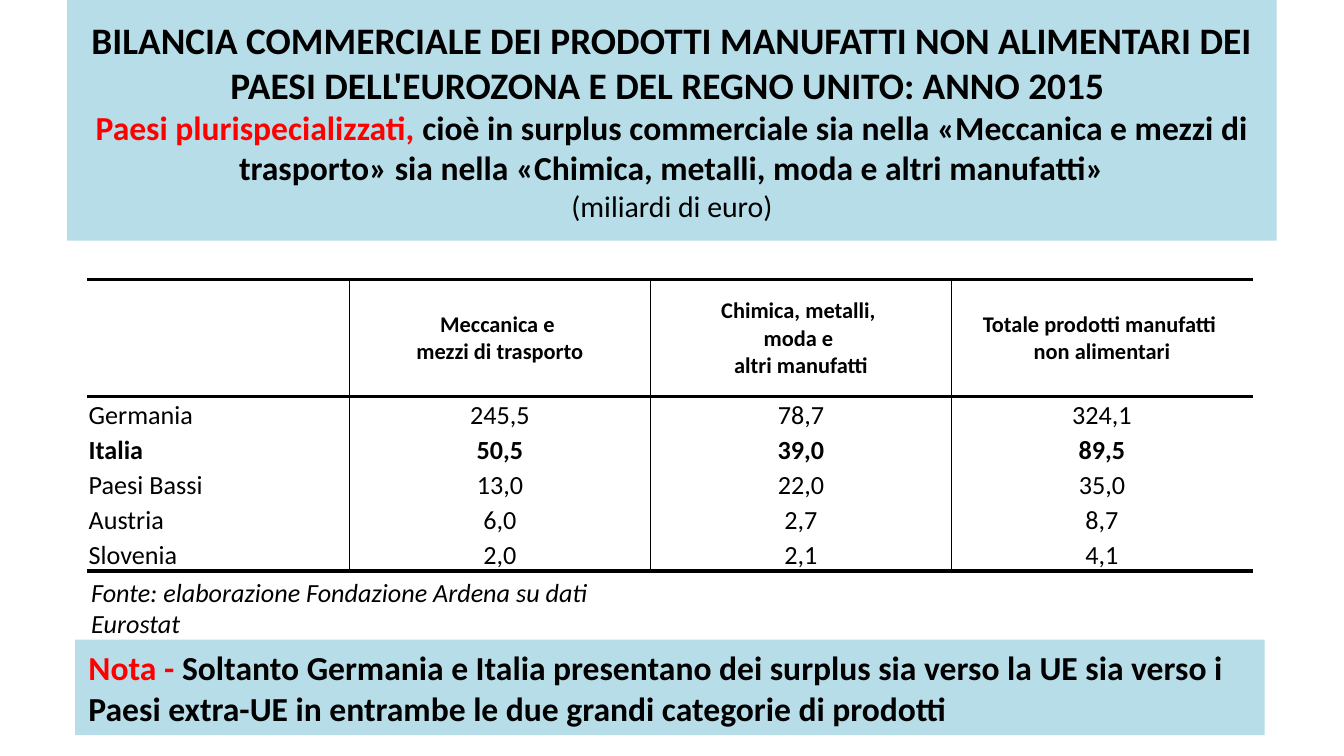
from dataclasses import dataclass

from lxml.etree import SubElement
from pptx import Presentation
from pptx.dml.color import RGBColor
from pptx.enum.shapes import MSO_SHAPE as Shape
from pptx.enum.text import MSO_ANCHOR as Anchor, MSO_AUTO_SIZE as AutoSize, PP_ALIGN as Align
from pptx.oxml.ns import qn
from pptx.util import Inches, Pt


@dataclass(frozen=True)
class Theme:
    font: str = "Calibri"
    ink: str = "000000"
    accent: str = "FF0000"
    panel: str = "B7DEE8"
    title: int = 20
    lead: int = 18
    unit: int = 16
    body: int = 14
    header: int = 12
    thin: float = 1
    thick: float = 2.25


THEME = Theme()

TITLE = [
    [("BILANCIA COMMERCIALE DEI PRODOTTI MANUFATTI NON ALIMENTARI DEI PAESI "
      "DELL'EUROZONA E DEL REGNO UNITO: ANNO 2015 ", THEME.title, THEME.ink, True)],
    [("Paesi plurispecializzati,", THEME.lead, THEME.accent, True),
     (" cioè in surplus commerciale sia nella «Meccanica e mezzi di trasporto» "
      "sia nella «Chimica, metalli, moda e altri manufatti»", THEME.lead, THEME.ink, True)],
    [("(miliardi di euro)", THEME.unit, THEME.ink, False)],
]
NOTE = [
    [("Nota - ", THEME.lead, THEME.accent, True),
     ("Soltanto Germania e Italia presentano dei surplus sia verso la UE sia verso i "
      "Paesi extra-UE in entrambe le due grandi categorie di prodotti",
      THEME.lead, THEME.ink, True)],
]
SOURCE = "Fonte: elaborazione Fondazione Ardena su dati Eurostat"
BALANCES = [
    ["", "Meccanica e \vmezzi di trasporto",
     "Chimica, metalli, \nmoda e \valtri manufatti",
     "Totale prodotti manufatti \vnon alimentari"],
    ["Germania", "245,5", "78,7", "324,1"],
    ["Italia", "50,5", "39,0", "89,5"],
    ["Paesi Bassi", "13,0", "22,0", "35,0"],
    ["Austria", "6,0", "2,7", "8,7"],
    ["Slovenia", "2,0", "2,1", "4,1"],
]
HIGHLIGHT = "Italia"


def style(span, size, color=THEME.ink, bold=False, italic=False):
    font = span.font
    font.name, font.size, font.bold, font.italic = THEME.font, Pt(size), bold, italic
    font.color.rgb = RGBColor.from_string(color)


def write_lines(para, lines, align):
    para.alignment = align
    for index, line in enumerate(lines):
        if index:
            para.add_line_break()
        for text, size, color, bold in line:
            span = para.add_run()
            span.text = text
            style(span, size, color, bold)


def fill_panel(box, lines, align):
    box.fill.solid()
    box.fill.fore_color.rgb = RGBColor.from_string(THEME.panel)
    frame = box.text_frame
    frame.word_wrap = True
    frame.auto_size = AutoSize.NONE
    frame.vertical_anchor = Anchor.MIDDLE
    write_lines(frame.paragraphs[0], lines, align)


def add_title(page):
    box = page.shapes.title
    box.left, box.top, box.width, box.height = Inches(0.5), 0, Inches(9), Inches(1.79)
    fill_panel(box, TITLE, Align.CENTER)


def add_note(page):
    box = page.shapes.add_shape(
        Shape.RECTANGLE, Inches(0.56), Inches(4.76), Inches(8.85), Inches(0.71))
    box.shadow.inherit = False
    box.line.fill.background()
    fill_panel(box, NOTE, Align.LEFT)


def add_source(page):
    box = page.shapes.add_textbox(Inches(0.58), Inches(4.24), Inches(4.58), Inches(0.34))
    frame = box.text_frame
    frame.word_wrap = False
    frame.auto_size = AutoSize.SHAPE_TO_FIT_TEXT
    frame.text = SOURCE
    style(frame.paragraphs[0].runs[0], THEME.body, italic=True)


def set_borders(cell, widths):
    properties = cell._tc.get_or_add_tcPr()
    for side in ("L", "R", "T", "B"):
        line = SubElement(properties, qn(f"a:ln{side}"))
        if side in widths:
            line.set("w", str(Pt(widths[side])))
            fill = SubElement(line, qn("a:solidFill"))
            SubElement(fill, qn("a:srgbClr"), val=THEME.ink)
        else:
            SubElement(line, qn("a:noFill"))


def cell_borders(row, column):
    widths = {}
    if column > 0:
        widths["L"] = THEME.thin
    if column < len(BALANCES[0]) - 1:
        widths["R"] = THEME.thin
    if row in (0, 1):
        widths["T"] = THEME.thick
    if row in (0, len(BALANCES) - 1):
        widths["B"] = THEME.thick
    return widths


def fill_cell(cell, text, header, bold, align):
    cell.margin_left = cell.margin_right = cell.margin_top = Inches(0.01)
    cell.margin_bottom = 0
    cell.vertical_anchor = Anchor.MIDDLE if header else Anchor.BOTTOM
    cell.text_frame.text = text
    for para in cell.text_frame.paragraphs:
        para.alignment = align
        for span in para.runs:
            style(span, THEME.header if header else THEME.body, bold=bold)


def add_balances(page):
    table = page.shapes.add_table(
        len(BALANCES), len(BALANCES[0]),
        Inches(0.65), Inches(2.08), Inches(8.66), Inches(2.16)).table
    table.first_row = table.horz_banding = False
    for index, column in enumerate(table.columns):
        column.width = Inches(2.24 if index else 1.95)
    for index, row in enumerate(table.rows):
        row.height = Inches(0.26 if index else 0.87)
    for row, values in enumerate(BALANCES):
        header = row == 0
        bold = header or values[0] == HIGHLIGHT
        for column, text in enumerate(values):
            cell = table.cell(row, column)
            fill_cell(cell, text, header, bold, Align.CENTER if column else Align.LEFT)
            set_borders(cell, cell_borders(row, column))
            cell.fill.background()


def main():
    deck = Presentation()
    deck.slide_width = Inches(10)
    deck.slide_height = deck.slide_width * 9 // 16
    page = deck.slides.add_slide(deck.slide_layouts[5])
    add_title(page)
    add_balances(page)
    add_source(page)
    add_note(page)
    deck.save("out.pptx")


if __name__ == "__main__":
    main()
